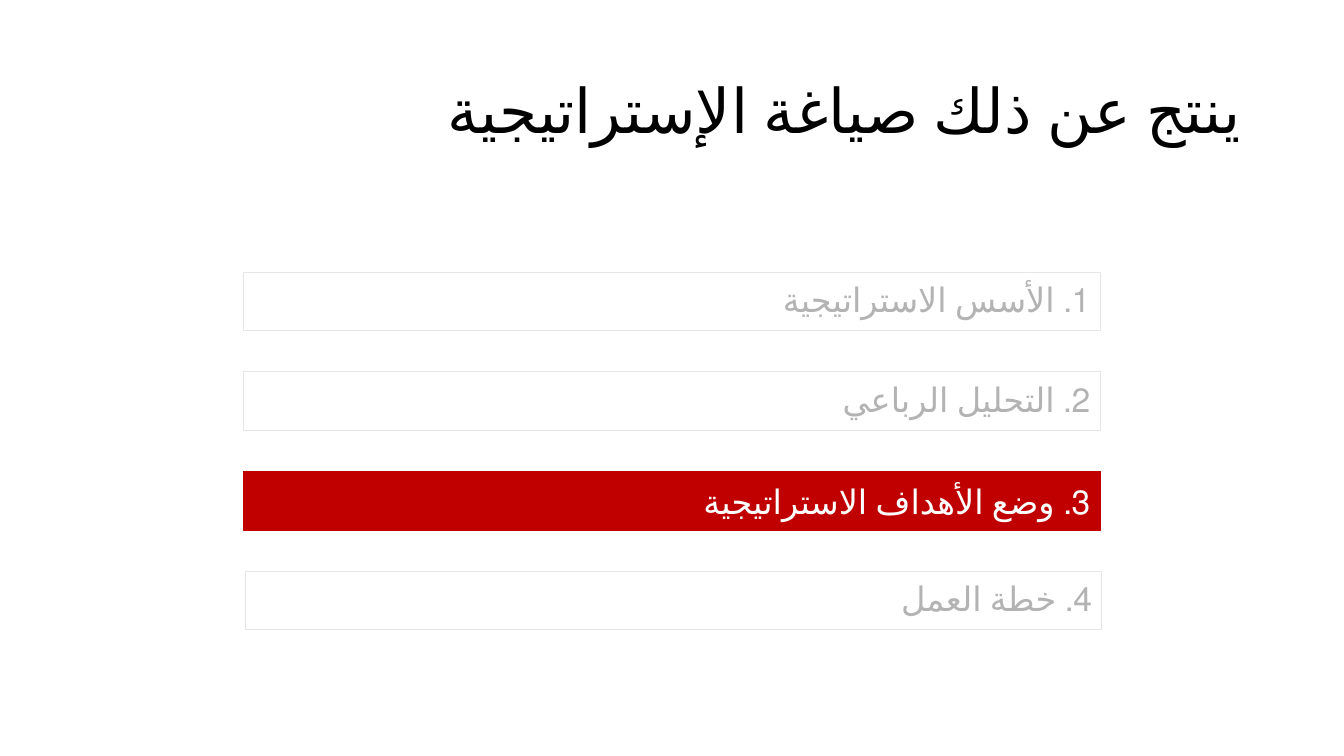
from pptx import Presentation
from pptx.dml.color import RGBColor
from pptx.enum import lang, shapes, text
from pptx.util import Cm, Pt

STEPS = [
    "1. الأسس الاستراتيجية",
    "2. التحليل الرباعي ",
    "3. وضع الأهداف الاستراتيجية",
    "4. خطة العمل ",
]
CURRENT_STEP = 2
FIRST_TOP = 6.86
STEP_PITCH = 2.51


def color(value):
    return RGBColor.from_string(value)


def write_rtl(frame, words, font, size, ink, spacing):
    frame.word_wrap = True
    frame.vertical_anchor = text.MSO_ANCHOR.MIDDLE
    frame.text = words
    paragraph = frame.paragraphs[0]
    paragraph.alignment = text.PP_ALIGN.RIGHT
    paragraph.line_spacing = spacing
    paragraph._p.get_or_add_pPr().set("rtl", "1")
    run = paragraph.runs[0]
    run.font.name = font
    run.font.size = Pt(size)
    run.font.color.rgb = color(ink)
    run.font.language_id = lang.MSO_LANGUAGE_ID.ARABIC


def add_heading(slide, words):
    heading = slide.shapes.add_textbox(Cm(2.33), Cm(1.01), Cm(29.21), Cm(3.68))
    write_rtl(heading.text_frame, words, "Calibri", 44, "000000", 0.9)


def add_step(slide, words, left, top, current):
    step = slide.shapes.add_shape(
        shapes.MSO_SHAPE.RECTANGLE, Cm(left), Cm(top), Cm(21.59), Cm(1.48)
    )
    step.shadow.inherit = False
    step.line.width = Pt(0.75)
    if current:
        step.fill.solid()
        step.fill.fore_color.rgb = color("C00000")
        step.line.color.rgb = color("C00000")
        write_rtl(step.text_frame, words, "Arial", 24, "FFFFFF", 1.0)
    else:
        step.fill.background()
        step.line.color.rgb = color("E7E6E6")
        write_rtl(step.text_frame, words, "Arial", 24, "B3B3B3", 0.9)


def main():
    deck = Presentation()
    deck.slide_width, deck.slide_height = Cm(33.87), Cm(19.05)
    slide = deck.slides.add_slide(deck.slide_layouts[6])
    add_heading(slide, "ينتج عن ذلك صياغة الإستراتيجية ")
    for index, words in enumerate(STEPS):
        left = 6.18 if index == len(STEPS) - 1 else 6.14
        add_step(slide, words, left, FIRST_TOP + index * STEP_PITCH, index == CURRENT_STEP)
    deck.save("out.pptx")


if __name__ == "__main__":
    main()
